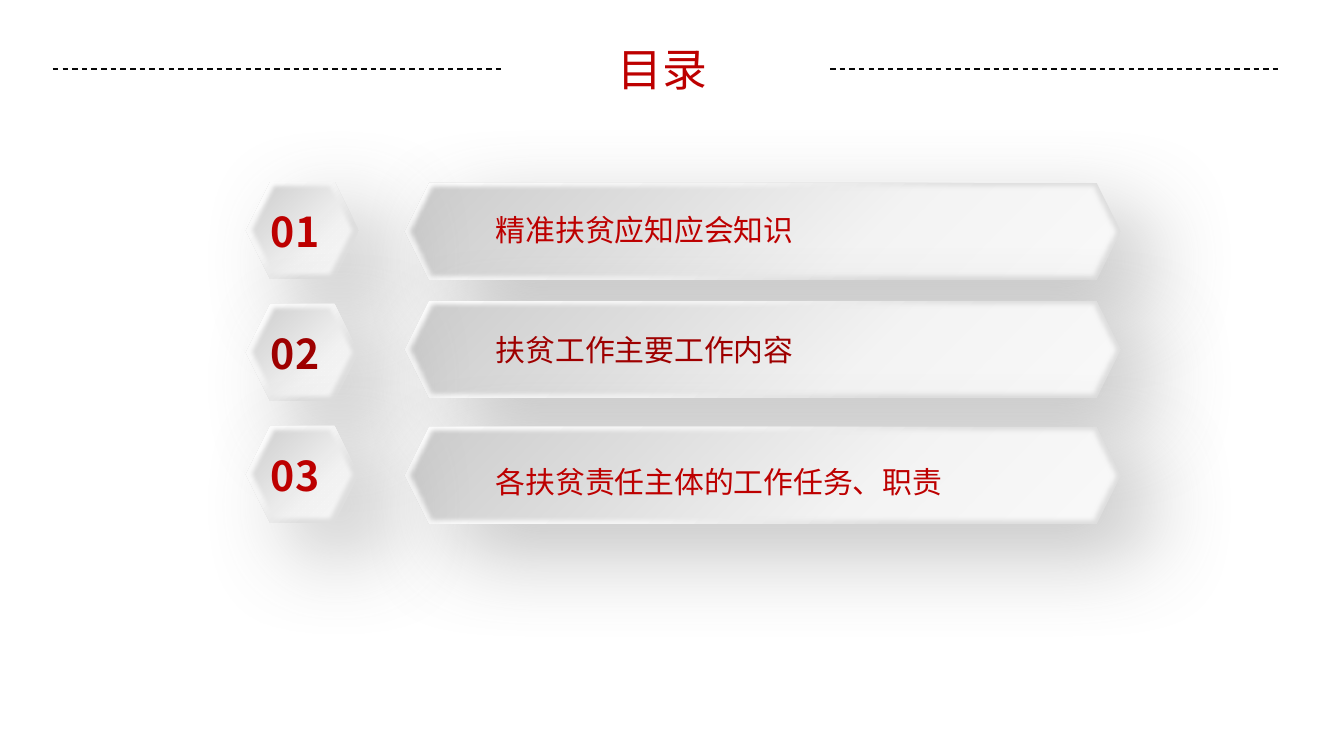
"""Build a table-of-contents slide with three embossed hexagon entries."""
import lxml.etree
import pptx
import pptx.dml.color
import pptx.enum.dml
import pptx.enum.shapes
import pptx.enum.text
import pptx.oxml
import pptx.oxml.ns
import pptx.util

SCALE = 914400 / 134.4
FONT = "Noto Sans CJK SC"
COLORS = {"red": "BD0000", "dark_red": "9E0000", "line": "080808", "shadow": "696969"}
RIM_STOPS = [(1, "DEDEDE"), (30, "E0E0E0"), (61, "F6F6F6"), (100, "FFFFFF")]
FACE_STOPS = [(0, "CBCBCB"), (32, "DEDEDE"), (64, "F3F3F3"), (100, "F9F9F9")]
SHADOW = (
    f'<a:outerShdw blurRad="{pptx.util.Pt(49)}" dist="{pptx.util.Pt(25)}" dir="2400000" '
    f'algn="tl" rotWithShape="0"><a:srgbClr val="{COLORS["shadow"]}">'
    '<a:alpha val="40000"/></a:srgbClr></a:outerShdw>'
)
SOFT_EDGE = f'<a:softEdge rad="{pptx.util.Pt(2.5)}"/>'
NAMESPACE = pptx.oxml.ns.nsdecls("a")

presentation = pptx.Presentation()
presentation.slide_width = round(1344 * SCALE)
presentation.slide_height = round(756 * SCALE)
slide = presentation.slides.add_slide(presentation.slide_layouts[6])


def add_embossed_hexagon(*box):
    layers = [(RIM_STOPS, 225, SHADOW), (FACE_STOPS, 45, SOFT_EDGE)]
    for stops, angle, effect in layers:
        shape = slide.shapes.add_shape(
            pptx.enum.shapes.MSO_SHAPE.HEXAGON, *[round(px * SCALE) for px in box]
        )
        shape.line.fill.background()
        shape.shadow.inherit = False
        stop_xml = "".join(
            f'<a:gs pos="{position * 1000}"><a:srgbClr val="{color}"/></a:gs>'
            for position, color in stops
        )
        gradient = pptx.oxml.parse_xml(
            f'<a:gradFill {NAMESPACE} rotWithShape="1"><a:gsLst>{stop_xml}</a:gsLst>'
            f'<a:lin ang="{angle * 60000}" scaled="0"/></a:gradFill>'
        )
        properties = shape.element.spPr
        properties.find(pptx.oxml.ns.qn("a:prstGeom")).addnext(gradient)
        effects = properties.find(pptx.oxml.ns.qn("a:effectLst"))
        effects.addnext(pptx.oxml.parse_xml(f"<a:effectLst {NAMESPACE}>{effect}</a:effectLst>"))
        properties.remove(effects)


def add_text(text, box, size, color, bold=False, inset=False):
    shape = slide.shapes.add_textbox(*[round(px * SCALE) for px in box])
    frame = shape.text_frame
    frame.word_wrap = True
    frame.auto_size = pptx.enum.text.MSO_AUTO_SIZE.SHAPE_TO_FIT_TEXT
    if not inset:
        frame.margin_left = frame.margin_top = frame.margin_right = frame.margin_bottom = 0
    paragraph = frame.paragraphs[0]
    run = paragraph.add_run()
    run.text = text
    run.font.name = FONT
    run.font.size = pptx.util.Pt(size)
    run.font.bold = bold
    run.font.color.rgb = pptx.dml.color.RGBColor.from_string(COLORS[color])
    east_asian = lxml.etree.SubElement(run.font._element, pptx.oxml.ns.qn("a:ea"))
    east_asian.set("typeface", FONT)
    run.font._element.find(pptx.oxml.ns.qn("a:latin")).addnext(east_asian)
    return paragraph


entries = [
    ("精准扶贫应知应会知识", 183, 212, "red"),
    ("扶贫工作主要工作内容", 301, 332, "dark_red"),
    ("各扶贫责任主体的工作任务、职责", 427, 464, "red"),
]
for index, (label, bar_top, label_top, color) in enumerate(entries):
    badge_top = 182 + 122 * index
    add_embossed_hexagon(405, bar_top, 716, 97)
    add_text(label, (496, label_top, 489, 36), 16, color)
    add_embossed_hexagon(246, badge_top, 113, 97)
    add_text(f"{index + 1:02d}", (271, badge_top + 24, 82, 50), 22, color, bold=True)

title = add_text("目录", (546, 35, 233, 67), 24, "red", inset=True)
title.alignment = pptx.enum.text.PP_ALIGN.CENTER

for left in (53, 830):
    connector = slide.shapes.add_connector(
        pptx.enum.shapes.MSO_CONNECTOR.STRAIGHT,
        *[round(px * SCALE) for px in (left, 69, left + 449, 69)],
    )
    connector.line.color.rgb = pptx.dml.color.RGBColor.from_string(COLORS["line"])
    connector.line.width = pptx.util.Pt(0.75)
    connector.line.dash_style = pptx.enum.dml.MSO_LINE.DASH
    lxml.etree.SubElement(connector.element.spPr, pptx.oxml.ns.qn("a:effectLst"))

presentation.save("out.pptx")
